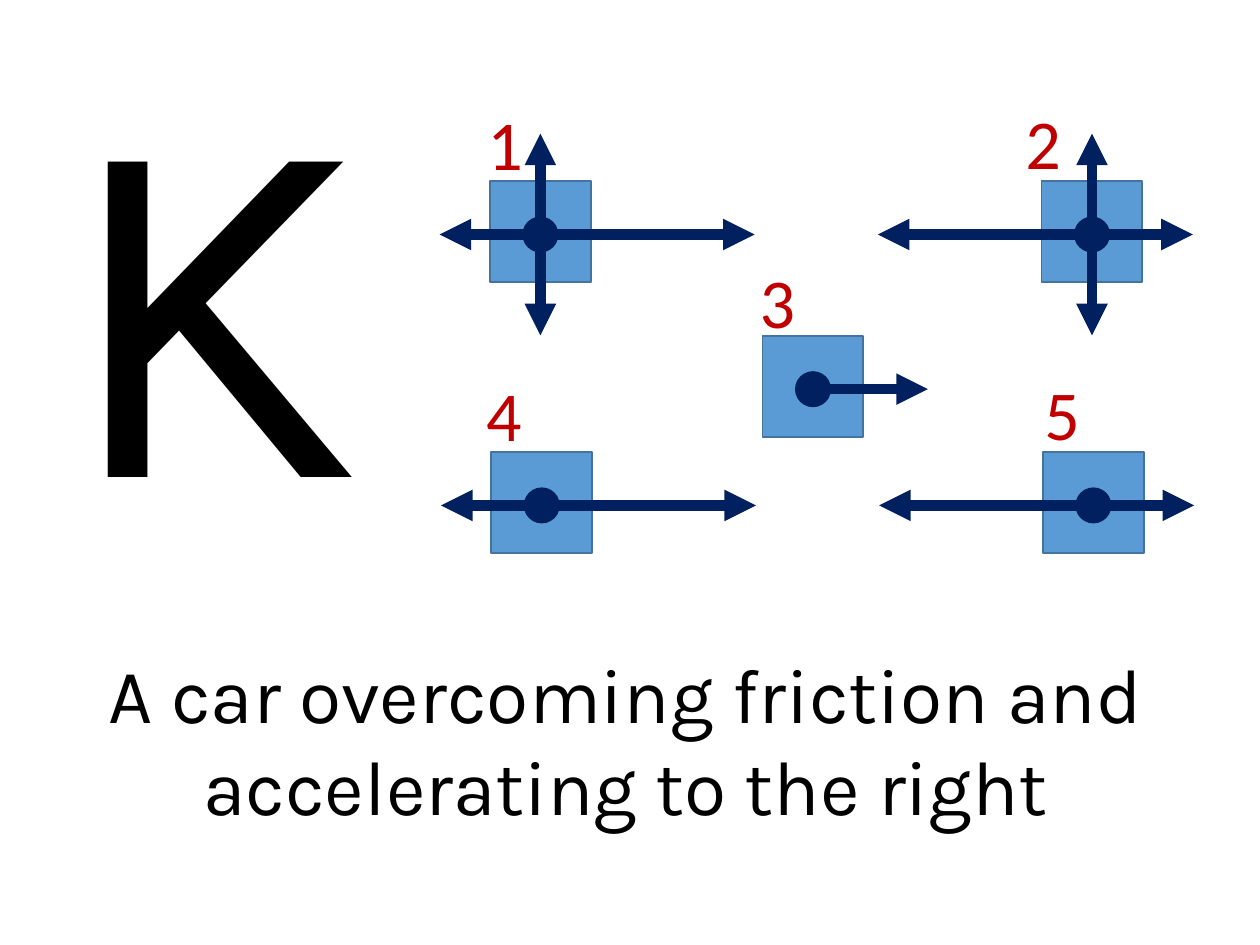
from dataclasses import dataclass

from lxml import etree
from pptx import Presentation
from pptx.dml.color import RGBColor
from pptx.enum.shapes import MSO_CONNECTOR, MSO_SHAPE
from pptx.enum.text import MSO_ANCHOR, MSO_AUTO_SIZE, PP_ALIGN
from pptx.oxml.ns import qn
from pptx.util import Pt

RECT, OVAL = MSO_SHAPE.RECTANGLE, MSO_SHAPE.OVAL
STRAIGHT = MSO_CONNECTOR.STRAIGHT
BOTTOM = MSO_ANCHOR.BOTTOM
CENTER, LEFT = PP_ALIGN.CENTER, PP_ALIGN.LEFT
NO_FIT, GROW = MSO_AUTO_SIZE.NONE, MSO_AUTO_SIZE.SHAPE_TO_FIT_TEXT

NAVY, BLUE, EDGE, RED, BLACK = "002060", "5B9BD5", "43739E", "C00000", "000000"
BOX, DOT, BOX_RISE = 57.6, 19.6, 30.4
SHORT, LONG = 57.6, 122.4


@dataclass(frozen=True)
class Force:
    dx: float
    dy: float = 0
    start: float = 0


@dataclass(frozen=True)
class Diagram:
    number: str
    x: float
    y: float
    label_x: float
    label_y: float
    forces: tuple[Force, ...]


VERTICAL = (Force(0, SHORT), Force(0, -SHORT))
RIGHTWARD = (Force(LONG), Force(-SHORT))
LEFTWARD = (Force(SHORT), Force(-LONG))

DIAGRAMS = (
    Diagram("1", 308.8, 134, 271.4, 54, VERTICAL + RIGHTWARD),
    Diagram("2", 624, 134, 578.9, 53.3, VERTICAL + LEFTWARD),
    Diagram("4", 309.6, 288.8, 270.7, 208.8, RIGHTWARD),
    Diagram("5", 624.8, 288.8, 589.7, 208.1, LEFTWARD),
    Diagram("3", 464.6, 222.4, 427, 144, (Force(SHORT, start=8),)),
)


def rgb(color: str) -> RGBColor:
    return RGBColor.from_string(color)


def set_text(sp, text: str, size: float, font: str, color: str, align) -> None:
    p = sp.text_frame.paragraphs[0]
    p.text = text
    p.alignment = align
    r = p.runs[0]
    r.font.size = Pt(size)
    r.font.name = font
    r.font.color.rgb = rgb(color)


def add_text(s, x: float, y: float, w: float, h: float, wrap: bool,
             text: str, size: float, font: str, color: str, align) -> None:
    sp = s.shapes.add_textbox(Pt(x), Pt(y), Pt(w), Pt(h))
    sp.text_frame.word_wrap = wrap
    sp.text_frame.auto_size = GROW
    set_text(sp, text, size, font, color, align)


def add_block(s, kind, x: float, y: float, size: float, fill: str, line: str) -> None:
    sp = s.shapes.add_shape(kind, Pt(x), Pt(y), Pt(size), Pt(size))
    sp.shadow.inherit = False
    sp.fill.solid()
    sp.fill.fore_color.rgb = rgb(fill)
    sp.line.color.rgb = rgb(line)
    sp.line.width = Pt(1)


def add_force(s, x: float, y: float, force: Force) -> None:
    x += force.start
    c = s.shapes.add_connector(STRAIGHT, Pt(x), Pt(y),
                               Pt(x + force.dx), Pt(y + force.dy))
    c.line.color.rgb = rgb(NAVY)
    c.line.width = Pt(6)
    etree.SubElement(c.line._get_or_add_ln(), qn("a:tailEnd"), type="triangle")
    etree.SubElement(c._element.spPr, qn("a:effectLst"))


def add_diagram(s, d: Diagram) -> None:
    add_block(s, RECT, d.x - BOX / 2, d.y - BOX_RISE, BOX, BLUE, EDGE)
    for force in d.forces:
        add_force(s, d.x, d.y, force)
    add_block(s, OVAL, d.x - DOT / 2, d.y - DOT / 2, DOT, NAVY, NAVY)
    add_text(s, d.label_x, d.label_y, 35.3, 55.4, False,
             d.number, 40, "Calibri", RED, LEFT)


def add_title(s, text: str) -> None:
    sp = s.shapes.title
    sp.left, sp.top, sp.width, sp.height = Pt(19.4), Pt(28.1), Pt(201.6), Pt(310.3)
    tf = sp.text_frame
    tf.auto_size = NO_FIT
    tf.vertical_anchor = BOTTOM
    set_text(sp, text, 287, "Karla", BLACK, CENTER)
    tf.paragraphs[0].line_spacing = 0.9


def main() -> None:
    prs = Presentation()
    prs.slide_width, prs.slide_height = Pt(720), Pt(540)
    s = prs.slides.add_slide(prs.slide_layouts[5])
    add_title(s, "K")
    add_text(s, 33.8, 365.8, 648, 113.8, True,
             "A car overcoming friction and accelerating to the right",
             44, "Karla", BLACK, CENTER)
    for d in DIAGRAMS:
        add_diagram(s, d)
    prs.save("out.pptx")


if __name__ == "__main__":
    main()
